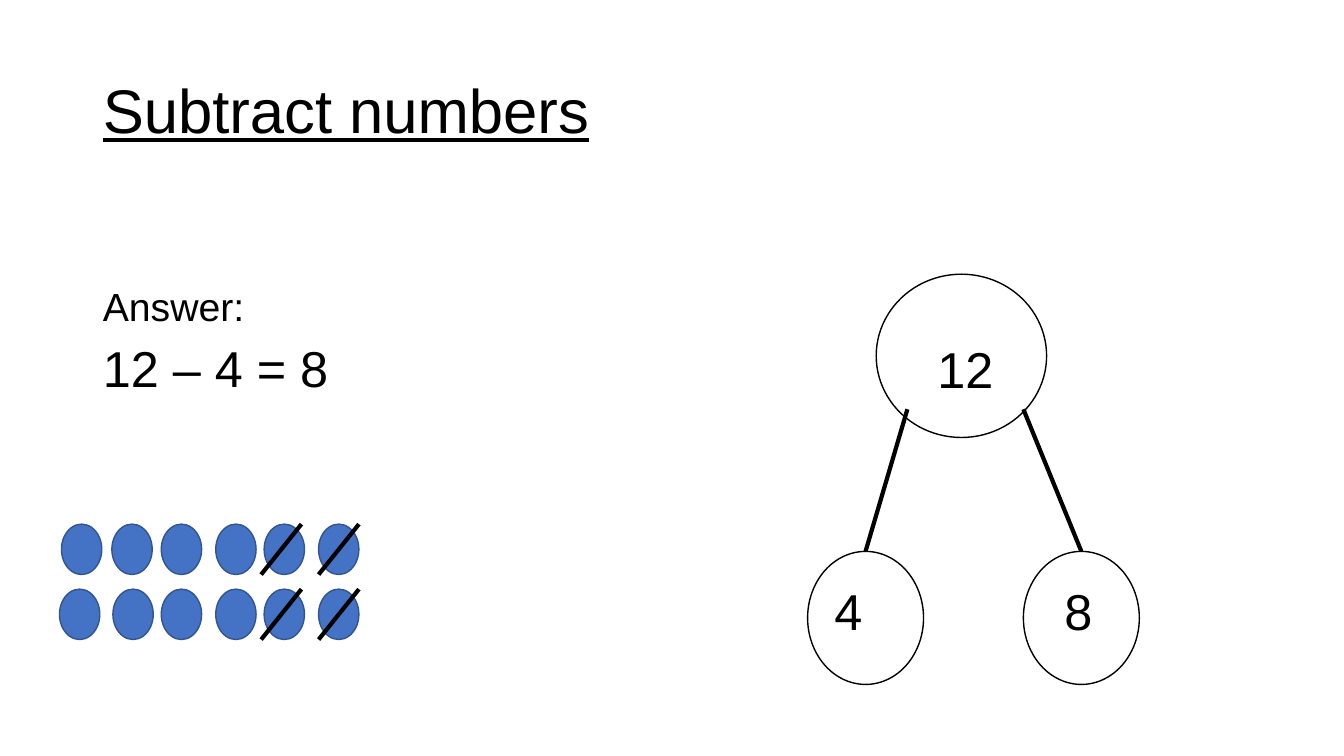
"""Builds a slide that shows a subtraction with counters and a part-whole model."""
from dataclasses import dataclass

from pptx import Presentation
from pptx import util as u
from pptx.dml.color import RGBColor
from pptx.enum import shapes as sh, text as tx
from pptx.oxml.ns import qn
from lxml import etree


@dataclass(frozen=True)
class Theme:
    """Colours, font and type sizes of the slide."""
    ink: str = "000000"
    fill: str = "4472C4"
    edge: str = "325491"
    font: str = "Arial"
    head: int = 44
    label: int = 28
    sum: int = 36
    thin: int = 1
    thick: int = 3


THEME = Theme()
WIDE, HIGH = u.Inches(13.33), u.Inches(7.5)
COLS, ROWS = 133.3, 75
ROUND = (4, 5)
COUNTERS = {
    52: (6.1, 11.1, 16, 21.4, 26.2, 31.6),
    58.45: (5.9, 11.2, 16, 21.4, 26.2, 31.6),
}
STRUCK = (25.9, 31.6)
WHOLE = ("12", (86.9, 27.2, 16.9, 16.2), (0.4, 1.2))
PARTS = (
    ("4", (80.1, 54.7, 11.5, 13.2), (-1.7, -0.8), (90, 40.6)),
    ("8", (101.5, 54.7, 11.5, 13.2), (-0.3, -0.8), (101.5, 40.6)),
)


def col(n):
    """Turn grid columns into a length."""
    return u.Emu(int(WIDE * n / COLS))


def row(n):
    """Turn grid rows into a length."""
    return u.Emu(int(HIGH * n / ROWS))


def box(x, y, w, h):
    """Turn a grid box into lengths."""
    return col(x), row(y), col(w), row(h)


def apply(item, form):
    """Set attributes of an item from a dict."""
    for name, value in form.items():
        setattr(item, name, value)


def write(para, words, size, **form):
    """Write one run in the theme's font and ink."""
    run = para.add_run()
    run.text = words
    apply(run.font, {"name": THEME.font, "size": u.Pt(size), **form})
    run.font.color.rgb = RGBColor.from_string(THEME.ink)


def place(holder, area, anchor):
    """Move a placeholder and return its text frame."""
    apply(holder, dict(zip(("left", "top", "width", "height"), box(*area))))
    frame = holder.text_frame
    apply(frame, {"word_wrap": True, "auto_size": tx.MSO_AUTO_SIZE.NONE,
                  "vertical_anchor": anchor})
    return frame


def title(slide, words):
    """Fill the title placeholder."""
    frame = place(slide.shapes.title, (9.2, 4, 115, 14.5), tx.MSO_ANCHOR.MIDDLE)
    para = frame.paragraphs[0]
    apply(para, {"alignment": tx.PP_ALIGN.LEFT, "line_spacing": 0.9})
    write(para, words, THEME.head, underline=True)


def body(slide, lines):
    """Fill the body placeholder with plain lines."""
    frame = place(slide.placeholders[1], (9.2, 28, 60, 16), tx.MSO_ANCHOR.TOP)
    for i, (words, size) in enumerate(lines):
        para = frame.add_paragraph() if i else frame.paragraphs[0]
        apply(para, {"line_spacing": 0.9, "space_before": u.Pt(10 if i else 0)})
        props = para._p.get_or_add_pPr()
        props.set("marL", "0")
        props.set("indent", "0")
        etree.SubElement(props, qn("a:buNone"))
        write(para, words, size)


def oval(slide, area, edge, fill=None):
    """Draw an ellipse, filled or open."""
    shape = slide.shapes.add_shape(sh.MSO_SHAPE.OVAL, *box(*area))
    shape.shadow.inherit = False
    if fill:
        shape.fill.solid()
        shape.fill.fore_color.rgb = RGBColor.from_string(fill)
    else:
        shape.fill.background()
    shape.line.color.rgb = RGBColor.from_string(edge)
    shape.line.width = u.Pt(THEME.thin)
    return shape


def number(slide, words, area, shift):
    """Draw an open circle with a number set off its centre."""
    shape = oval(slide, area, THEME.ink)
    dx, dy = shift
    frame = shape.text_frame
    apply(frame, {
        "margin_left": col(max(0, 2 * dx)), "margin_right": col(max(0, -2 * dx)),
        "margin_top": row(max(0, 2 * dy)), "margin_bottom": row(max(0, -2 * dy)),
        "word_wrap": True, "vertical_anchor": tx.MSO_ANCHOR.MIDDLE})
    para = frame.paragraphs[0]
    para.alignment = tx.PP_ALIGN.CENTER
    write(para, words, THEME.sum)
    return shape


def stroke(slide, start, end):
    """Draw a thick straight line."""
    line = slide.shapes.add_connector(
        sh.MSO_CONNECTOR.STRAIGHT, col(start[0]), row(start[1]), col(end[0]), row(end[1]))
    line.line.color.rgb = RGBColor.from_string(THEME.ink)
    line.line.width = u.Pt(THEME.thick)
    etree.SubElement(line._element.spPr, qn("a:effectLst"))
    return line


def counters(slide):
    """Draw the rows of counters and strike out the last two of each."""
    w, h = ROUND
    for y, places in COUNTERS.items():
        for x in places:
            oval(slide, (x, y, w, h), THEME.edge, THEME.fill)
        for x in STRUCK:
            stroke(slide, (x + w, y), (x, y + h))


def model(slide):
    """Draw the whole and join it to its parts."""
    number(slide, *WHOLE)
    for words, area, shift, start in PARTS:
        part = number(slide, words, area, shift)
        stroke(slide, start, start).end_connect(part, 0)


def main():
    """Build and save the slide."""
    deck = Presentation()
    apply(deck, {"slide_width": WIDE, "slide_height": HIGH})
    slide = deck.slides.add_slide(deck.slide_layouts[1])
    title(slide, "Subtract numbers")
    body(slide, (("Answer:", THEME.label), ("12 – 4 = 8", THEME.sum)))
    counters(slide)
    model(slide)
    deck.save("out.pptx")


if __name__ == "__main__":
    main()
